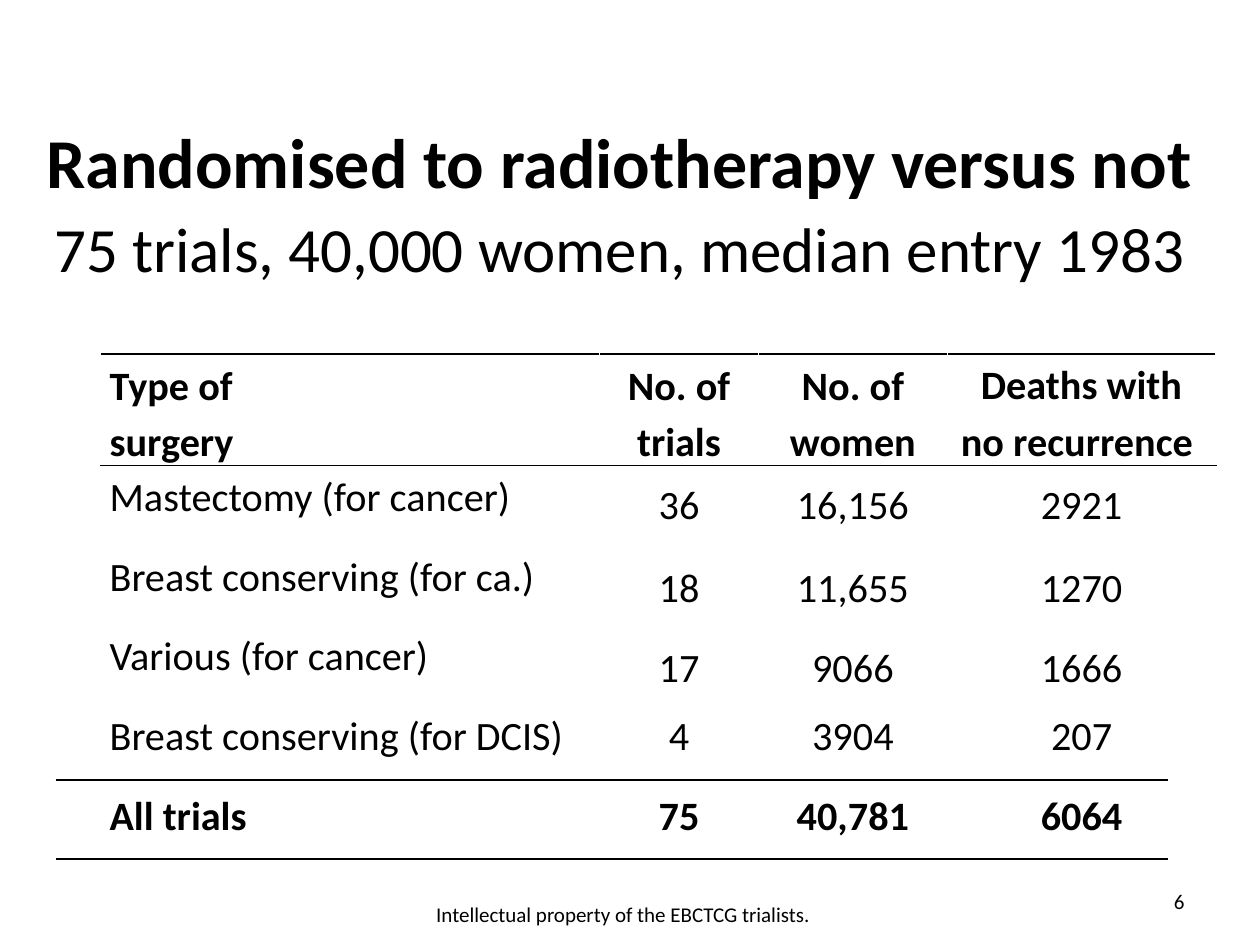
from lxml import etree
from pptx import Presentation
from pptx.dml.color import RGBColor
from pptx.enum import shapes, text
from pptx.oxml import ns
from pptx.util import Cm, Pt

BLACK = RGBColor(0, 0, 0)
LEFT, MID, RIGHT = text.PP_ALIGN.LEFT, text.PP_ALIGN.CENTER, text.PP_ALIGN.RIGHT
TOP, CENTRE, BASE = text.MSO_ANCHOR.TOP, text.MSO_ANCHOR.MIDDLE, text.MSO_ANCHOR.BOTTOM


def style(run, size, bold=False):
    run.font.name = "Calibri"
    run.font.size = Pt(size)
    run.font.bold = bold
    run.font.color.rgb = BLACK


def edge(cell, tag):
    """Give one side of a cell a thin black border."""
    line = etree.SubElement(cell._tc.get_or_add_tcPr(), ns.qn(f"a:{tag}"), w=str(Pt(1)))
    fill = etree.SubElement(line, ns.qn("a:solidFill"))
    etree.SubElement(fill, ns.qn("a:srgbClr"), val=str(BLACK))


prs = Presentation()
prs.slide_width, prs.slide_height = Cm(25.4), Cm(19.05)
slide = prs.slides.add_slide(prs.slide_layouts[6])

# Title
title = slide.shapes.add_textbox(Cm(0.58), Cm(2.39), Cm(23.8), Cm(3.43)).text_frame
title.word_wrap = True
title.margin_left = title.margin_right = title.margin_top = title.margin_bottom = 0
lines = [
    [("Randomised to radiotherapy versus not", 40, True)],
    [(" ", 40, True), ("75 trials, 40,000 women, median entry 1983 ", 36, False)],
]
title.add_paragraph()
for para, parts in zip(title.paragraphs, lines):
    para.alignment = MID
    for words, size, bold in parts:
        run = para.add_run()
        run.text = words
        style(run, size, bold)

# Table of trials
rows = [
    ["Type of\nsurgery", "No. of trials", "No. of women", "Deaths with no recurrence\u00a0".replace("\u00a0", " ")],
    ["Mastectomy (for cancer)", "36", "16,156", "2921"],
    ["Breast conserving (for ca.)", "18", "11,655", "1270"],
    ["Various (for cancer)", "17", "9066", "1666"],
    ["Breast conserving (for DCIS)", "4", "3904", "207"],
    ["All trials", "75", "40,781", "6064"],
]
widths = [10.06, 3.2, 3.81, 5.41]
heights = [2.24] + [1.61] * 5
table = slide.shapes.add_table(6, 4, Cm(2.03), Cm(7.14), Cm(sum(widths)), Cm(sum(heights))).table
table.first_row = table.horz_banding = False
for col, width in zip(table.columns, widths):
    col.width = Cm(width)
for r, row in enumerate(rows):
    table.rows[r].height = Cm(heights[r])
    for c, words in enumerate(row):
        cell = table.cell(r, c)
        cell.margin_left = cell.margin_right = Cm(0.18)
        cell.margin_top = cell.margin_bottom = 0
        if r == 0:
            cell.vertical_anchor = BASE if c == 3 else CENTRE
            edge(cell, "lnT")
            edge(cell, "lnB")
        else:
            cell.vertical_anchor = CENTRE if c and r < 4 else TOP
            if r == 1:
                edge(cell, "lnT")
        cell.fill.background()
        cell.text_frame.text = words
        for para in cell.text_frame.paragraphs:
            para.alignment = MID if c else LEFT
            para.line_spacing = 1 if r == 1 and c else 1.15
            style(para.runs[0], 23, r in (0, 5))

# Rules around the total
for y in (15.72, 17.32):
    rule = slide.shapes.add_connector(shapes.MSO_CONNECTOR.STRAIGHT, Cm(1.12), Cm(y), Cm(23.55), Cm(y))
    rule.line.color.rgb = BLACK
    rule.line.width = Pt(1)
    etree.SubElement(rule._element.spPr, ns.qn("a:effectLst"))

# Page number and footer
notes = [
    ("6", 18.21, 17.65, 5.92, RIGHT),
    ("Intellectual property of the EBCTCG trialists. ", 0.71, 17.91, 23.8, MID),
]
for words, x, y, width, align in notes:
    frame = slide.shapes.add_textbox(Cm(x), Cm(y), Cm(width), Cm(1.02)).text_frame
    frame.word_wrap = True
    frame.vertical_anchor = CENTRE
    frame.text = words
    frame.paragraphs[0].alignment = align
    style(frame.paragraphs[0].runs[0], 12)

prs.save("out.pptx")
